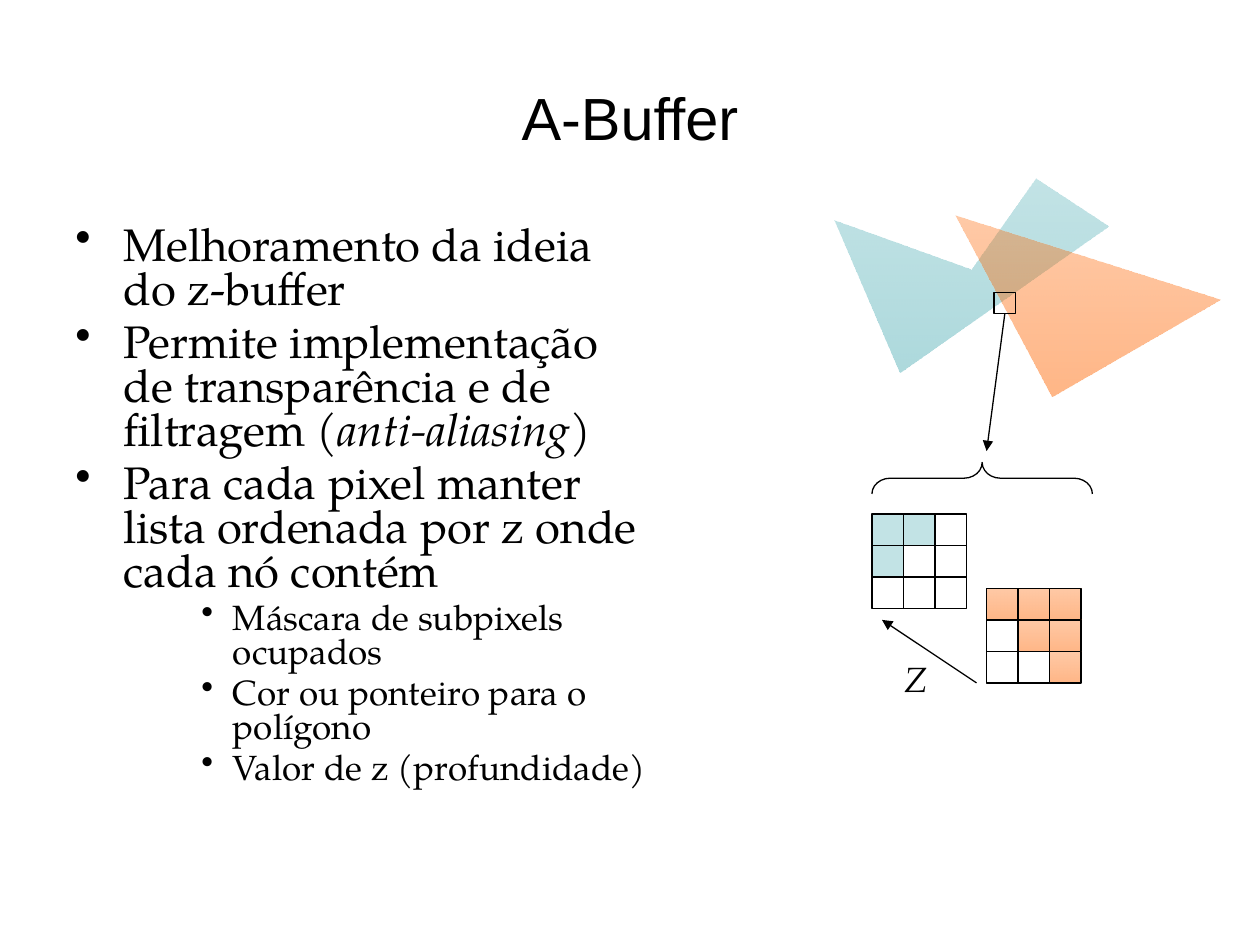
import pptx
import pptx.util
import pptx.dml.color
import pptx.enum.dml
import pptx.enum.shapes
import pptx.enum.text
import pptx.oxml
from pptx.oxml.ns import qn

Inches, Pt = pptx.util.Inches, pptx.util.Pt
Shape = pptx.enum.shapes.MSO_SHAPE
Align = pptx.enum.text.PP_ALIGN
Anchor = pptx.enum.text.MSO_ANCHOR

COLORS = {"black": "000000", "teal": "53B0B7", "orange": "FF6600"}
SERIF = "TeX Gyre Pagella"
WIDTH, HEIGHT = 10, 7.5

# Text between asterisks is italic.
POINTS = [
    (0, "Melhoramento da ideia do z-buffer"),
    (0, "Permite implementação de transparência e de filtragem (*anti-aliasing*)"),
    (0, "Para cada pixel manter lista ordenada por z onde cada nó contém"),
    (2, "Máscara de subpixels ocupados"),
    (2, "Cor ou ponteiro para o polígono"),
    (2, "Valor de z (profundidade)"),
]
LEVELS = {
    0: {"size": 26, "indent": 0.38, "hanging": 0.38},
    2: {"size": 20, "indent": 1.25, "hanging": 0.25},
}

GRADIENT = (35, 48)  # opacity in percent, top to bottom
POLYGONS = [
    ("teal", [(6.62, 1.75), (7.14, 2.96), (8.8, 1.8), (8.22, 1.42), (7.71, 2.14)]),
    ("orange", [(7.58, 1.71), (8.35, 3.15), (9.69, 2.38)]),
]
CELL = 0.25
MASKS = [
    {"at": (6.92, 4.08), "color": "teal", "opacity": (35,), "rows": ["##.", "#..", "..."]},
    {"at": (7.83, 4.67), "color": "orange", "opacity": GRADIENT, "rows": ["###", ".##", "..#"]},
]


def rgb(name):
    return pptx.dml.color.RGBColor.from_string(COLORS[name])


def tint(shape, color, opacity):
    """Fill evenly for one opacity, or with a vertical gradient for two."""
    fill = shape.fill
    if len(opacity) == 1:
        fill.solid()
        fill.fore_color.rgb = rgb(color)
    else:
        fill.gradient()
        fill.gradient_angle = 270
        for stop in fill.gradient_stops:
            stop.color.rgb = rgb(color)
    for node, percent in zip(shape._element.spPr.iter(qn("a:srgbClr")), opacity):
        pptx.oxml.xmlchemy.OxmlElement  # element factory
        alpha = node.makeelement(qn("a:alpha"), {"val": str(percent * 1000)})
        node.append(alpha)


def outline(shape):
    shape.line.color.rgb = rgb("black")
    shape.line.width = Pt(0.75)


def add_outlined(page, kind, left, top, width, height):
    shape = page.shapes.add_shape(kind, *map(Inches, (left, top, width, height)))
    shape.shadow.inherit = False
    shape.fill.background()
    outline(shape)
    return shape


def add_polygon(page, color, points):
    corners = [(Inches(x), Inches(y)) for x, y in points]
    builder = page.shapes.build_freeform(*corners[0])
    builder.add_line_segments(corners[1:], close=True)
    shape = builder.convert_to_shape()
    shape.shadow.inherit = False
    tint(shape, color, GRADIENT)
    shape.line.fill.background()


def add_arrow(page, start, end):
    arrow = page.shapes.add_connector(
        pptx.enum.shapes.MSO_CONNECTOR.STRAIGHT, *map(Inches, start + end))
    outline(arrow)
    line = arrow.line._get_or_add_ln()
    line.append(line.makeelement(qn("a:tailEnd"), {"type": "triangle"}))
    properties = arrow._element.spPr
    properties.append(properties.makeelement(qn("a:effectLst"), {}))
    return arrow


def add_box(page, left, top, width, height, wrap=True, anchor=Anchor.TOP):
    box = page.shapes.add_textbox(*map(Inches, (left, top, width, height)))
    box.text_frame.word_wrap = wrap
    box.text_frame.vertical_anchor = anchor
    return box.text_frame


def write(para, text, font=SERIF, size=20, align=Align.LEFT):
    para.alignment = align
    for index, part in enumerate(text.split("*")):
        if part:
            span = para.add_run()
            span.text = part
            span.font.name = font
            span.font.size = Pt(size)
            span.font.italic = index % 2 == 1
            span.font.color.rgb = rgb("black")


def add_bullet(para, indent, hanging):
    properties = para._p.get_or_add_pPr()
    properties.set("marL", str(Inches(indent)))
    properties.set("indent", str(-Inches(hanging)))
    properties.append(properties.makeelement(qn("a:buChar"), {"char": "•"}))


def add_points(page):
    frame = add_box(page, 0.5, 1.75, 4.75, 4.95)
    for index, (level, text) in enumerate(POINTS):
        style = LEVELS[level]
        para = frame.add_paragraph() if index else frame.paragraphs[0]
        para.level = level
        para.line_spacing = 0.8
        para.space_before = Pt(round(0.22 * style["size"], 1))
        add_bullet(para, style["indent"], style["hanging"])
        write(para, text, size=style["size"])


def add_mask(page, at, color, opacity, rows):
    left, top = at
    for row, marks in enumerate(rows):
        for column, mark in enumerate(marks):
            cell = add_outlined(page, Shape.RECTANGLE, left + column * CELL,
                                top + row * CELL, CELL, CELL)
            if mark == "#":
                tint(cell, color, opacity)


def main():
    deck = pptx.Presentation()
    deck.slide_width, deck.slide_height = Inches(WIDTH), Inches(HEIGHT)
    page = deck.slides.add_slide(deck.slide_layouts[6])

    title = add_box(page, 0.5, 0.3, WIDTH - 1, 1.25, anchor=Anchor.MIDDLE)
    write(title.paragraphs[0], "A-Buffer", font="Arial", size=34, align=Align.CENTER)
    add_points(page)

    for color, points in POLYGONS:
        add_polygon(page, color, points)
    pixel = add_outlined(page, Shape.RECTANGLE, 7.89, 2.32, 0.17, 0.17)
    for mask in MASKS:
        add_mask(page, **mask)

    add_arrow(page, (7.75, 5.42), (7, 4.92))
    depth = add_box(page, 7.08, 5.17, 0.39, 0.43, wrap=False)
    write(depth.paragraphs[0], "*Z*", align=Align.CENTER)

    brace = add_outlined(page, Shape.RIGHT_BRACE, 7.67, 2.92, CELL, 7 * CELL)
    brace.rotation = 270
    brace.adjustments[0] = 0.58
    add_arrow(page, (7.96, 2.5), (7.83, 3.58)).begin_connect(pixel, 2)

    deck.save("out.pptx")


if __name__ == "__main__":
    main()
